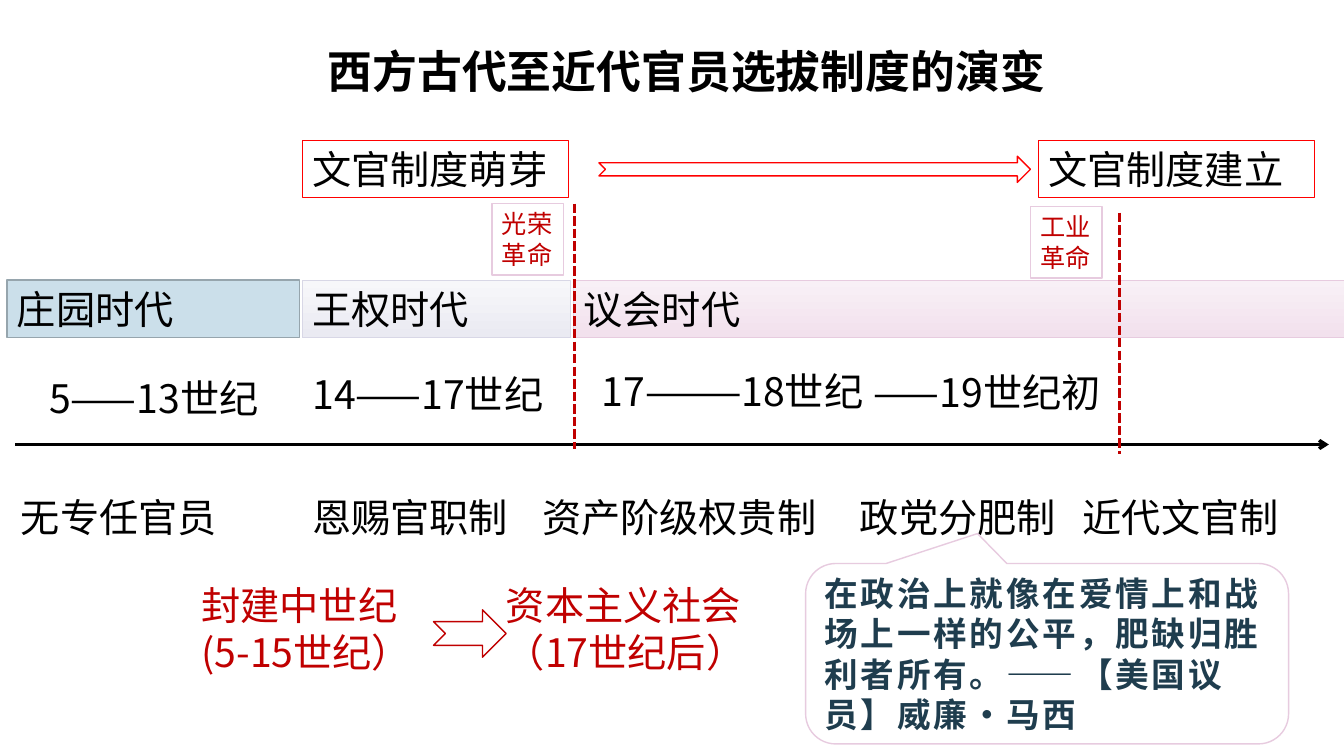
from dataclasses import dataclass

from lxml.etree import SubElement
from pptx import Presentation
from pptx.dml.color import RGBColor
from pptx.enum.dml import MSO_LINE
from pptx.enum.shapes import MSO_CONNECTOR, MSO_SHAPE
from pptx.enum.text import MSO_ANCHOR as Anchor, PP_ALIGN as Align
from pptx.oxml.ns import qn
from pptx.util import Emu, Pt

PX = 9144  # 100 px to the inch


@dataclass(frozen=True)
class Theme:
    font: str = "Noto Sans CJK SC"
    black: str = "000000"
    white: str = "FFFFFF"
    red: str = "FF0000"
    crimson: str = "C00000"
    navy: str = "1F3D4E"
    pink: str = "E7CBDF"
    lilac: str = "D8D7E6"
    slate: str = "96A5AD"
    manor: tuple = ("CBDFEA",)
    crown: tuple = ("F7F7FA", "EAEAF2")
    parliament: tuple = ("F8F0F6", "F2E1ED")
    title: int = 32
    body: int = 28
    quote: int = 24
    note: int = 18


THEME = Theme()


@dataclass(frozen=True)
class Box:
    left: int
    top: int
    width: int
    height: int

    def inner(self, x, y, width, height):
        return Box(self.left + x, self.top + y, width, height)

    def emu(self):
        return [Emu(n * PX) for n in (self.left, self.top, self.width, self.height)]


def color(value):
    return RGBColor.from_string(value)


def write(shape, text, size=THEME.body, ink=THEME.black, bold=False, align=Align.LEFT,
          anchor=Anchor.TOP, line_spacing=None, space_after=None, tracking=None):
    """Fill a shape with text, one paragraph per line."""
    frame = shape.text_frame
    frame.word_wrap = True
    frame.vertical_anchor = anchor
    for index, line in enumerate(text.split("\n")):
        paragraph = frame.add_paragraph() if index else frame.paragraphs[0]
        paragraph.alignment = align
        paragraph.line_spacing = line_spacing
        paragraph.space_after = space_after
        run = paragraph.add_run()
        run.text = line
        run.font.size = Pt(size)
        run.font.bold = bold
        run.font.color.rgb = color(ink)
        run.font.name = THEME.font
        properties = run.font._element
        SubElement(properties, qn("a:ea")).set("typeface", THEME.font)
        if tracking:
            properties.set("spc", str(tracking))


def add_text(slide, box, text, **text_format):
    write(slide.shapes.add_textbox(*box.emu()), text, **text_format)


def add_shape(slide, box, kind=MSO_SHAPE.RECTANGLE, fills=(), line=THEME.red, weight=1):
    """Add a shape with no fill, a plain fill or a top-to-bottom gradient."""
    shape = slide.shapes.add_shape(kind, *box.emu())
    shape.shadow.inherit = False
    shape.line.color.rgb = color(line)
    shape.line.width = Pt(weight)
    if len(fills) > 1:
        shape.fill.gradient()
        shape.fill.gradient_angle = 270
        for stop, value in zip(shape.fill.gradient_stops, fills):
            stop.color.rgb = color(value)
    elif fills:
        shape.fill.solid()
        shape.fill.fore_color.rgb = color(fills[0])
    else:
        shape.fill.background()
    return shape


def add_line(slide, start, end, ink):
    points = [Emu(n * PX) for n in (*start, *end)]
    connector = slide.shapes.add_connector(MSO_CONNECTOR.STRAIGHT, *points)
    connector.line.color.rgb = color(ink)
    connector.line.width = Pt(2.25)
    SubElement(connector._element.spPr, qn("a:effectLst"))
    return connector


def add_time_axis(slide, box):
    axis = add_line(slide, (box.left, box.top), (box.left + box.width, box.top), THEME.black)
    SubElement(axis.line._get_or_add_ln(), qn("a:tailEnd")).set("type", "arrow")


def add_eras(slide, box):
    """Era bars, with the centuries they cover below."""
    bars = [
        ("庄园时代", 0, 290, THEME.manor, THEME.slate, 1),
        ("王权时代", 293, 266, THEME.crown, THEME.lilac, 0.5),
        ("议会时代", 562, 764, THEME.parliament, THEME.pink, 0.5),
    ]
    for name, x, width, fills, line, weight in bars:
        bar = add_shape(slide, box.inner(x, 0, width, 57), fills=fills, line=line, weight=weight)
        write(bar, name)
    add_text(slide, box.inner(32, 74, 244, 71), "5——13世纪",
             line_spacing=1.3, space_after=Pt(10))
    centuries = [
        ("14——17世纪", 293, 84, 365),
        ("17———18世纪", 580, 81, 341),
        ("——19世纪初", 850, 82, 464),
    ]
    for text, x, y, width in centuries:
        add_text(slide, box.inner(x, y, width, 57), text)


def add_systems(slide, box):
    systems = [
        ("无专任官员", 0, 289),
        ("恩赐官职制", 289, 277),
        ("资产阶级权贵制", 517, 306),
        ("政党分肥制", 832, 222),
        ("近代文官制", 1053, 245),
    ]
    for name, x, width in systems:
        add_text(slide, box.inner(x, 0, width, box.height), name,
                 line_spacing=1.3, space_after=Pt(10))


def add_civil_service(slide, box):
    """From the first civil service to its foundation."""
    for name, x, width in [("文官制度萌芽", 0, 264), ("文官制度建立", 730, 274)]:
        label = add_shape(slide, box.inner(x, 0, width, box.height), weight=0.75)
        write(label, name)
    add_shape(slide, box.inner(294, 16, 428, 26), MSO_SHAPE.NOTCHED_RIGHT_ARROW)


def add_society_shift(slide, box):
    add_text(slide, box.inner(0, 0, 295, box.height), "封建中世纪\n(5-15世纪）", ink=THEME.crimson)
    add_text(slide, box.inner(302, 0, 301, box.height), "资本主义社会\n（17世纪后）", ink=THEME.crimson)
    add_shape(slide, box.inner(240, 33, 72, 47), MSO_SHAPE.NOTCHED_RIGHT_ARROW,
              line=THEME.crimson)


def add_quote(slide, box):
    callout = add_shape(slide, box, MSO_SHAPE.ROUNDED_RECTANGULAR_CALLOUT,
                        fills=(THEME.white,), line=THEME.pink)
    for index, value in enumerate((-0.144, -0.666, 0.167)):
        callout.adjustments[index] = value
    write(callout, "在政治上就像在爱情上和战场上一样的公平，肥缺归胜利者所有。——【美国议员】威廉·马西",
          size=THEME.quote, ink=THEME.navy, bold=True, anchor=Anchor.MIDDLE, tracking=200)


def add_revolution(slide, box, name, line_x, line_y, length):
    """A labelled square with a dashed divider to its right."""
    x, y = box.left + line_x, box.top + line_y
    divider = add_line(slide, (x, y), (x, y + length), THEME.crimson)
    divider.line.dash_style = MSO_LINE.SQUARE_DOT
    label = add_shape(slide, box, fills=(THEME.white,), line=THEME.pink)
    write(label, name, size=THEME.note, ink=THEME.crimson)


def main():
    presentation = Presentation()
    presentation.slide_width, presentation.slide_height = Emu(1333 * PX), Emu(750 * PX)
    slide = presentation.slides.add_slide(presentation.slide_layouts[6])
    add_time_axis(slide, Box(15, 441, 1303, 0))
    add_eras(slide, Box(7, 278, 1326, 145))
    add_systems(slide, Box(11, 470, 1308, 71))
    add_text(slide, Box(103, 38, 1156, 64), "西方古代至近代官员选拔制度的演变",
             size=THEME.title, bold=True, align=Align.CENTER)
    add_quote(slide, Box(799, 559, 479, 179))
    add_civil_service(slide, Box(300, 139, 1004, 57))
    add_society_shift(slide, Box(190, 572, 603, 104))
    add_revolution(slide, Box(488, 202, 71, 71), "光荣革命", 82, 0, 243)
    add_revolution(slide, Box(1022, 205, 71, 71), "工业革命", 88, 6, 239)
    presentation.save("out.pptx")


if __name__ == "__main__":
    main()
